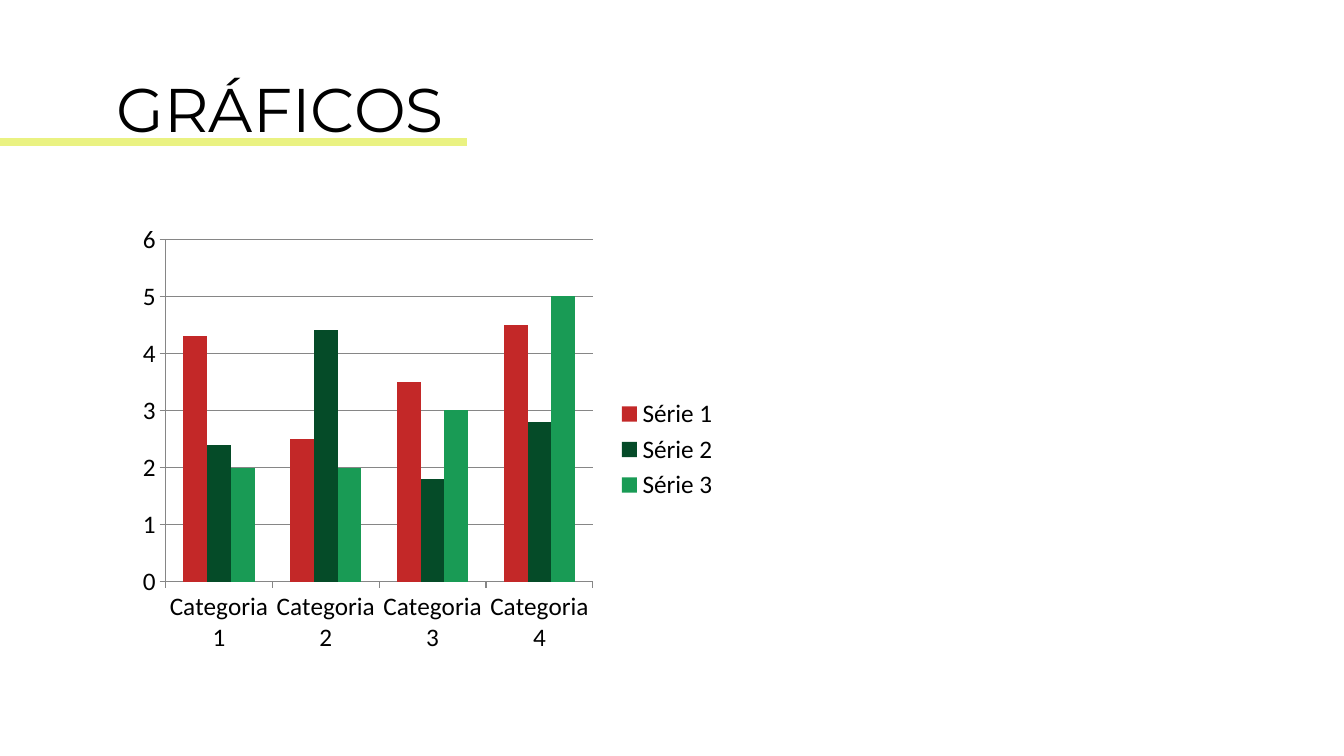
from lxml import etree
from pptx import Presentation
from pptx.chart.data import CategoryChartData
from pptx.dml.color import RGBColor
from pptx.enum.chart import XL_CHART_TYPE, XL_LEGEND_POSITION, XL_TICK_MARK
from pptx.enum.text import MSO_ANCHOR
from pptx.oxml import parse_xml
from pptx.oxml.ns import nsdecls, qn
from pptx.util import Inches, Pt

COLUMNS = XL_CHART_TYPE.COLUMN_CLUSTERED
RIGHT = XL_LEGEND_POSITION.RIGHT
OUTSIDE, NO_TICK = XL_TICK_MARK.OUTSIDE, XL_TICK_MARK.NONE
MIDDLE = MSO_ANCHOR.MIDDLE

COLORS = {name: RGBColor.from_string(value) for name, value in {
    "text": "000000", "axis": "868686", "rule": "EAF282",
    "Série 1": "C32828", "Série 2": "054B28", "Série 3": "199B55",
}.items()}
SERIES = {
    "Série 1": (4.3, 2.5, 3.5, 4.5),
    "Série 2": (2.4, 4.4, 1.8, 2.8),
    "Série 3": (2, 2, 3, 5),
}


def format_font(font, **values):
    font.color.rgb = COLORS["text"]
    for name, value in values.items():
        setattr(font, name, value)


presentation = Presentation()
presentation.slide_width = Inches(13.33)
presentation.slide_height = Inches(7.5)
slide = presentation.slides.add_slide(presentation.slide_layouts[6])

# Chart data and frame
chart_data = CategoryChartData()
chart_data.categories = [f"Categoria {number}" for number in range(1, 5)]
for name, values in SERIES.items():
    chart_data.add_series(name, values)
chart = slide.shapes.add_chart(
    COLUMNS, Inches(1.26), Inches(2.22), Inches(5.97), Inches(4.48), chart_data
).chart
chart.has_title = False
format_font(chart.font, name="Calibri", size=Pt(18))

# Columns
plot = chart.plots[0]
plot.gap_width, plot.overlap, plot.vary_by_categories = 150, 0, False
for series in plot.series:
    series.format.fill.solid()
    series.format.fill.fore_color.rgb = COLORS[series.name]

# Axes and grid
value_axis = chart.value_axis
value_axis.minimum_scale, value_axis.maximum_scale = 0, 6
value_axis.major_unit = 1
value_axis.has_major_gridlines = True
for axis in (chart.category_axis, value_axis):
    axis.major_tick_mark, axis.minor_tick_mark = OUTSIDE, NO_TICK
for part in (chart.category_axis, value_axis, value_axis.major_gridlines):
    part.format.line.color.rgb = COLORS["axis"]
    part.format.line.width = Pt(0.75)

# Legend
chart.has_legend = True
chart.legend.position = RIGHT
chart.legend.include_in_layout = False

# Plot area as shares of the chart
plot_area = plot._element.getparent()
for old_layout in plot_area.findall(qn("c:layout")):
    plot_area.remove(old_layout)
layout = parse_xml(f"<c:layout {nsdecls('c')}><c:manualLayout/></c:layout>")
for tag, value in {
    "layoutTarget": "inner", "xMode": "edge", "yMode": "edge",
    "x": 0.064, "y": 0.034, "w": 0.71, "h": 0.759,
}.items():
    etree.SubElement(layout[0], qn(f"c:{tag}")).set("val", str(value))
plot_area.insert(0, layout)

# Title
title = slide.shapes.add_textbox(
    Inches(1.06), Inches(0.39), Inches(11.11), Inches(1.45))
title.text_frame.word_wrap = True
title.text_frame.vertical_anchor = MIDDLE
paragraph = title.text_frame.paragraphs[0]
paragraph.line_spacing = 0.9
run = paragraph.add_run()
run.text = "GRÁFICOS"
format_font(run.font, name="Montserrat", size=Pt(44))

# Rule under the title
rule = slide.shapes.add_connector(
    1, 0, Inches(1.41), Inches(4.63), Inches(1.41))
rule.line.color.rgb = COLORS["rule"]
rule.line.width = Pt(6)
etree.SubElement(rule._element.spPr, qn("a:effectLst"))

presentation.save("out.pptx")
